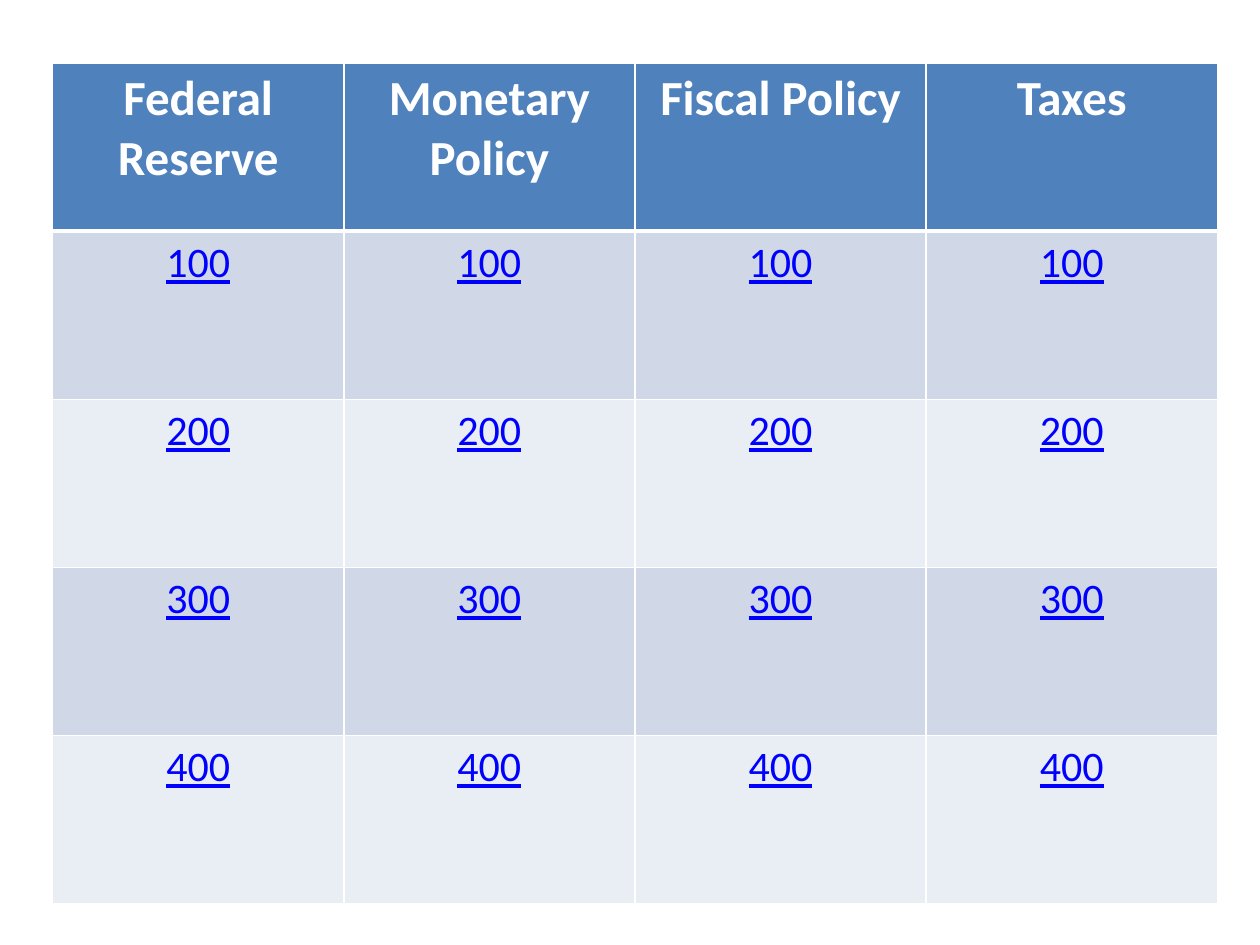
import lxml.etree
import pptx
import pptx.dml.color
import pptx.enum.text
import pptx.oxml.ns
import pptx.util

Cm = pptx.util.Cm
Pt = pptx.util.Pt

# Content
CATEGORIES = ["Federal Reserve", "Monetary Policy", "Fiscal Policy", "Taxes"]
POINTS = [100, 200, 300, 400]

THEME = {
    "font": "Calibri",
    "header_size": 28,
    "points_size": 24,
    "header_fill": "4F81BD",
    "bands": ["D0D8E8", "E9EDF4"],
    "header_text": "FFFFFF",
    "points_text": "0000FF",
    "rule": "FFFFFF",
    "thin": 1,
    "thick": 3,
}

# Board geometry
LEFT, TOP = Cm(1.06), Cm(1.27)
COLUMN_WIDTH, ROW_HEIGHT = Cm(5.87), Cm(3.39)


def rgb(code):
    return pptx.dml.color.RGBColor.from_string(code)


def draw_borders(cell, top, bottom):
    """Rule all four sides; borders must precede the fill in the cell."""
    properties = cell._tc.get_or_add_tcPr()
    qn = pptx.oxml.ns.qn
    widths = {"lnL": THEME["thin"], "lnR": THEME["thin"], "lnT": top, "lnB": bottom}
    for position, (side, width) in enumerate(widths.items()):
        line = lxml.etree.Element(qn("a:" + side), w=str(Pt(width)))
        fill = lxml.etree.SubElement(line, qn("a:solidFill"))
        lxml.etree.SubElement(fill, qn("a:srgbClr"), val=THEME["rule"])
        properties.insert(position, line)


def fill_cell(cell, text, row):
    header = row == 0
    cell.fill.solid()
    cell.fill.fore_color.rgb = rgb(
        THEME["header_fill"] if header else THEME["bands"][(row - 1) % 2])
    draw_borders(cell,
                 top=THEME["thick" if row == 1 else "thin"],
                 bottom=THEME["thick" if header else "thin"])

    paragraph = cell.text_frame.paragraphs[0]
    paragraph.alignment = pptx.enum.text.PP_ALIGN.CENTER
    label = paragraph.add_run()
    label.text = text
    label.font.name = THEME["font"]
    label.font.size = Pt(THEME["header_size" if header else "points_size"])
    label.font.bold = header
    label.font.underline = not header
    label.font.color.rgb = rgb(THEME["header_text" if header else "points_text"])


def main():
    deck = pptx.Presentation()
    deck.slide_width, deck.slide_height = Cm(25.4), Cm(19.05)
    slide = deck.slides.add_slide(deck.slide_layouts[6])

    # Question board: one category per column, one point value per row
    rows = [CATEGORIES] + [[str(value)] * len(CATEGORIES) for value in POINTS]
    board = slide.shapes.add_table(
        len(rows), len(CATEGORIES), LEFT, TOP,
        COLUMN_WIDTH * len(CATEGORIES), ROW_HEIGHT * len(rows)).table
    for column in board.columns:
        column.width = COLUMN_WIDTH
    for row, texts in enumerate(rows):
        board.rows[row].height = ROW_HEIGHT
        for column, text in enumerate(texts):
            fill_cell(board.cell(row, column), text, row)

    deck.save("out.pptx")


if __name__ == "__main__":
    main()
